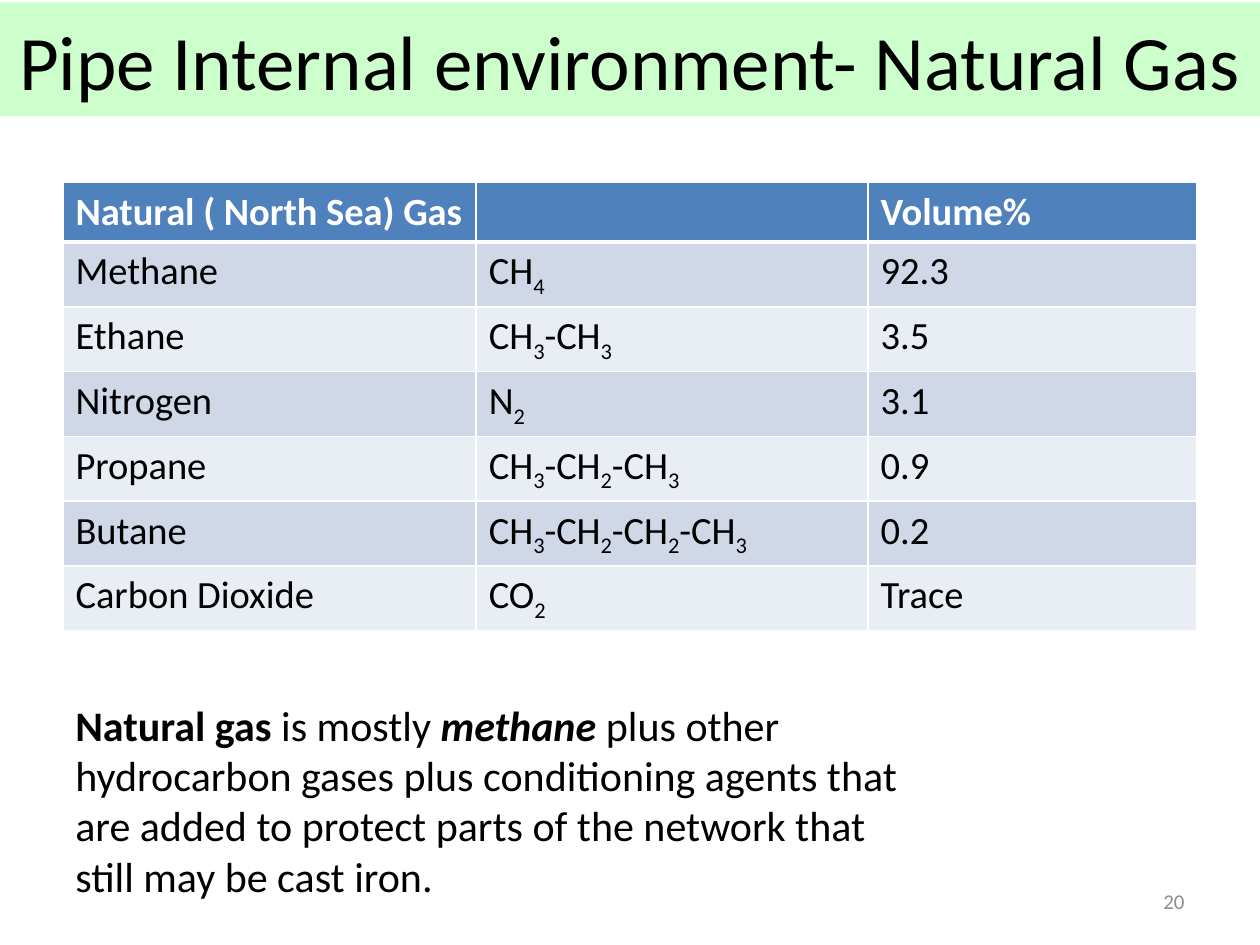
from itertools import groupby

from lxml import etree
from pptx import Presentation
from pptx import util as u
from pptx.dml.color import RGBColor
from pptx.enum import text
from pptx.oxml import ns

FONT = "Calibri"
COLORS = {
    "title_band": "CCFFCC",
    "header": "4F81BD",
    "odd_row": "D0D8E8",
    "even_row": "E9EDF4",
    "border": "FFFFFF",
    "header_text": "FFFFFF",
    "text": "000000",
    "page_number": "8C8C8C",
}
COLUMN_WIDTHS = (8.33, 7.9, 6.63)
ROW_HEIGHT = 1.04
GASES = [
    ("Natural ( North Sea) Gas", "", "Volume%"),
    ("Methane", "CH4", "92.3"),
    ("Ethane", "CH3-CH3", "3.5"),
    ("Nitrogen", "N2", "3.1"),
    ("Propane", "CH3-CH2-CH3", "0.9"),
    ("Butane", "CH3-CH2-CH2-CH3", "0.2"),
    ("Carbon Dioxide", "CO2", "Trace"),
]


def rgb(name):
    return RGBColor.from_string(COLORS[name])


def place(shape, left, top, width, height):
    shape.left, shape.top = u.Cm(left), u.Cm(top)
    shape.width, shape.height = u.Cm(width), u.Cm(height)


def add_span(para, words, size, color="text", bold=False, italic=False,
             subscript=False):
    span = para.add_run()
    span.text = words
    font = span.font
    font.name, font.size = FONT, u.Pt(size)
    font.bold, font.italic = bold, italic
    font.color.rgb = rgb(color)
    if subscript:
        span._r.get_or_add_rPr().set("baseline", "-25000")


def add_formula(para, formula, size):
    """Write a chemical formula with its digits as subscripts."""
    for is_digit, letters in groupby(formula, str.isdigit):
        add_span(para, "".join(letters), size, subscript=is_digit)


def set_borders(cell, bottom=1):
    properties = cell._tc.get_or_add_tcPr()
    widths = {"lnL": 1, "lnR": 1, "lnT": 1, "lnB": bottom}
    for position, (side, width) in enumerate(widths.items()):
        line = etree.Element(ns.qn("a:" + side), w=str(u.Pt(width)))
        fill = etree.SubElement(line, ns.qn("a:solidFill"))
        etree.SubElement(fill, ns.qn("a:srgbClr"), val=COLORS["border"])
        properties.insert(position, line)


def add_title(page, words):
    title = page.shapes.title
    place(title, 0, 0.05, 25.4, 2.29)
    title.fill.solid()
    title.fill.fore_color.rgb = rgb("title_band")
    title.text_frame.vertical_anchor = text.MSO_ANCHOR.MIDDLE
    para = title.text_frame.paragraphs[0]
    para.alignment = text.PP_ALIGN.CENTER
    add_span(para, words, 44)


def add_gas_table(page):
    frame = page.shapes.add_table(
        len(GASES), len(COLUMN_WIDTHS), u.Cm(1.27), u.Cm(3.68),
        u.Cm(sum(COLUMN_WIDTHS)), u.Cm(ROW_HEIGHT * len(GASES)))
    table = frame.table
    for column, width in zip(table.columns, COLUMN_WIDTHS):
        column.width = u.Cm(width)
    for row, gas in enumerate(GASES):
        is_header = row == 0
        band = "header" if is_header else "odd_row" if row % 2 else "even_row"
        for column, words in enumerate(gas):
            cell = table.cell(row, column)
            cell.fill.solid()
            cell.fill.fore_color.rgb = rgb(band)
            set_borders(cell, bottom=3 if is_header else 1)
            para = cell.text_frame.paragraphs[0]
            if is_header and words:
                add_span(para, words, 22, color="header_text", bold=True)
            elif column == 1:
                add_formula(para, words, 22)
            else:
                add_span(para, words, 22)
    frame.height = u.Cm(8.31)


def add_text_box(page, bounds, align=text.PP_ALIGN.LEFT,
                 anchor=text.MSO_ANCHOR.TOP):
    """Add a wrapping text box and return its paragraph."""
    box = page.shapes.add_textbox(*(u.Cm(length) for length in bounds))
    box.text_frame.word_wrap = True
    box.text_frame.vertical_anchor = anchor
    para = box.text_frame.paragraphs[0]
    para.alignment = align
    return para


def main():
    deck = Presentation()
    deck.slide_width, deck.slide_height = u.Cm(25.4), u.Cm(19.05)
    page = deck.slides.add_slide(deck.slide_layouts[5])

    add_title(page, "Pipe Internal environment- Natural Gas")
    add_gas_table(page)

    summary = add_text_box(page, (1.27, 13.97, 17.6, 4.37))
    add_span(summary, "Natural gas ", 24, bold=True)
    add_span(summary, "is mostly ", 24)
    add_span(summary, "methane", 24, bold=True, italic=True)
    add_span(summary, " plus other hydrocarbon gases plus conditioning agents "
             "that are added to protect parts of the network that still may "
             "be cast iron.", 24)

    number = add_text_box(page, (18.2, 17.65, 5.93, 1.02),
                          align=text.PP_ALIGN.RIGHT,
                          anchor=text.MSO_ANCHOR.MIDDLE)
    add_span(number, "20", 12, color="page_number")

    deck.save("out.pptx")


if __name__ == "__main__":
    main()
